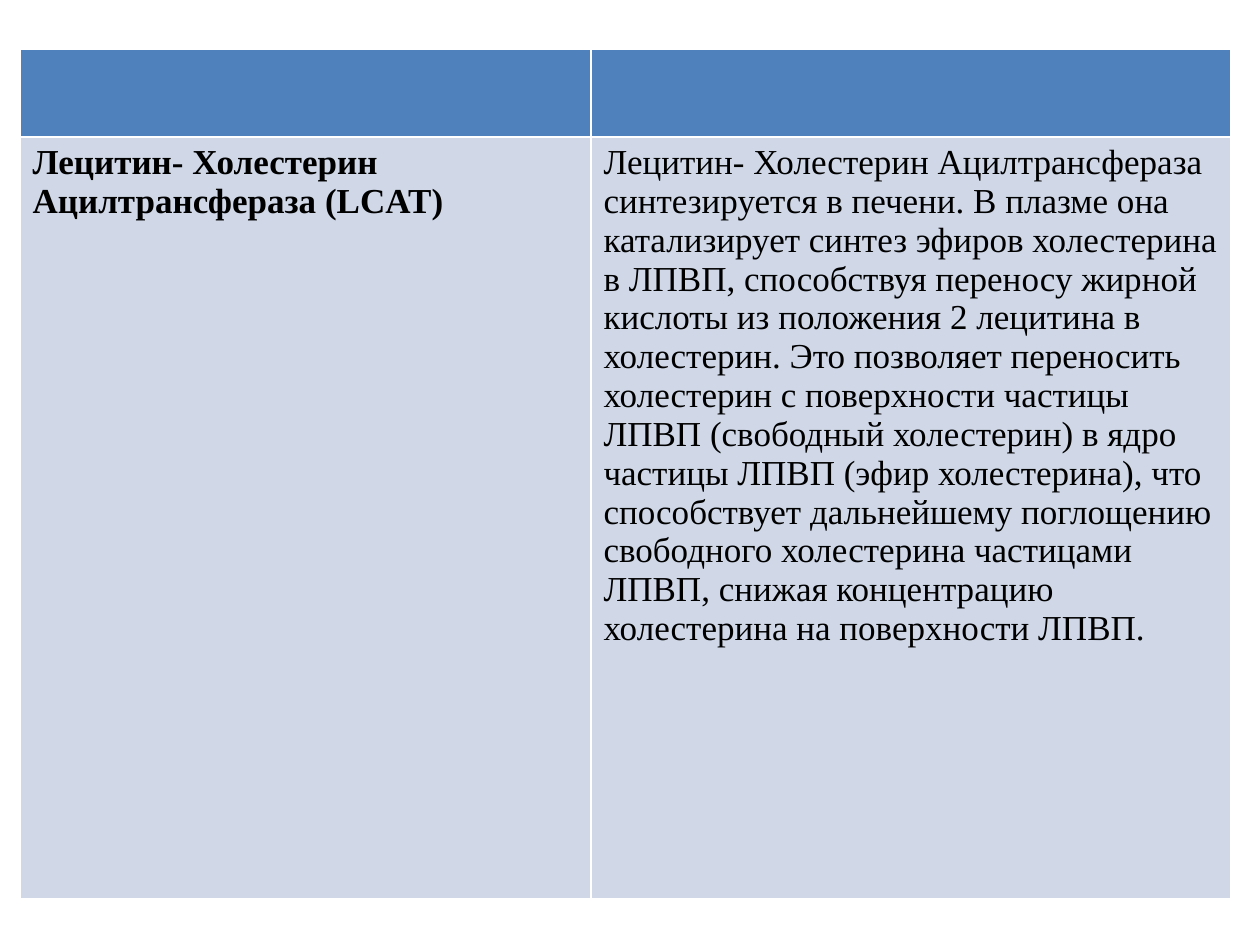
from pptx import Presentation
from pptx.dml.color import RGBColor
from pptx.util import Pt

PX = 914400 // 126
BLUE = RGBColor(0x4F, 0x81, 0xBD)
PALE = RGBColor(0xD0, 0xD8, 0xE8)
BLACK = RGBColor(0, 0, 0)
FONT = "Times New Roman"

COLS = (571, 640)
ROWS = (88, 762)
NAME = "Лецитин- Холестерин Ацилтрансфераза (LCAT)"
ROLE = (
    "Лецитин- Холестерин Ацилтрансфераза синтезируется в печени. "
    "В плазме она катализирует синтез эфиров холестерина в ЛПВП, "
    "способствуя переносу жирной кислоты из положения 2 лецитина в холестерин. "
    "Это позволяет переносить холестерин с поверхности частицы ЛПВП "
    "(свободный холестерин) в ядро частицы ЛПВП (эфир холестерина), "
    "что способствует дальнейшему поглощению свободного холестерина частицами ЛПВП, "
    "снижая концентрацию холестерина на поверхности ЛПВП."
)


def fill_cell(cell, color, text="", bold=False):
    cell.fill.solid()
    cell.fill.fore_color.rgb = color
    if not text:
        return
    cell.text = text
    font = cell.text_frame.paragraphs[0].font
    font.name = FONT
    font.size = Pt(20)
    font.bold = bold
    font.color.rgb = BLACK


def add_grid(slide, left, top):
    """Enzyme table: an empty header row above name and role."""
    frame = slide.shapes.add_table(
        len(ROWS), len(COLS), left * PX, top * PX, sum(COLS) * PX, sum(ROWS) * PX
    )
    table = frame.table
    for col, width in zip(table.columns, COLS):
        col.width = width * PX
    for row, height in zip(table.rows, ROWS):
        row.height = height * PX
    for cell in table.rows[0].cells:
        fill_cell(cell, BLUE)
    fill_cell(table.cell(1, 0), PALE, NAME, bold=True)
    fill_cell(table.cell(1, 1), PALE, ROLE)


def main():
    deck = Presentation()
    deck.slide_width = 1260 * PX
    deck.slide_height = 945 * PX
    slide = deck.slides.add_slide(deck.slide_layouts[6])
    add_grid(slide, 20, 49)
    deck.save("out.pptx")


if __name__ == "__main__":
    main()
